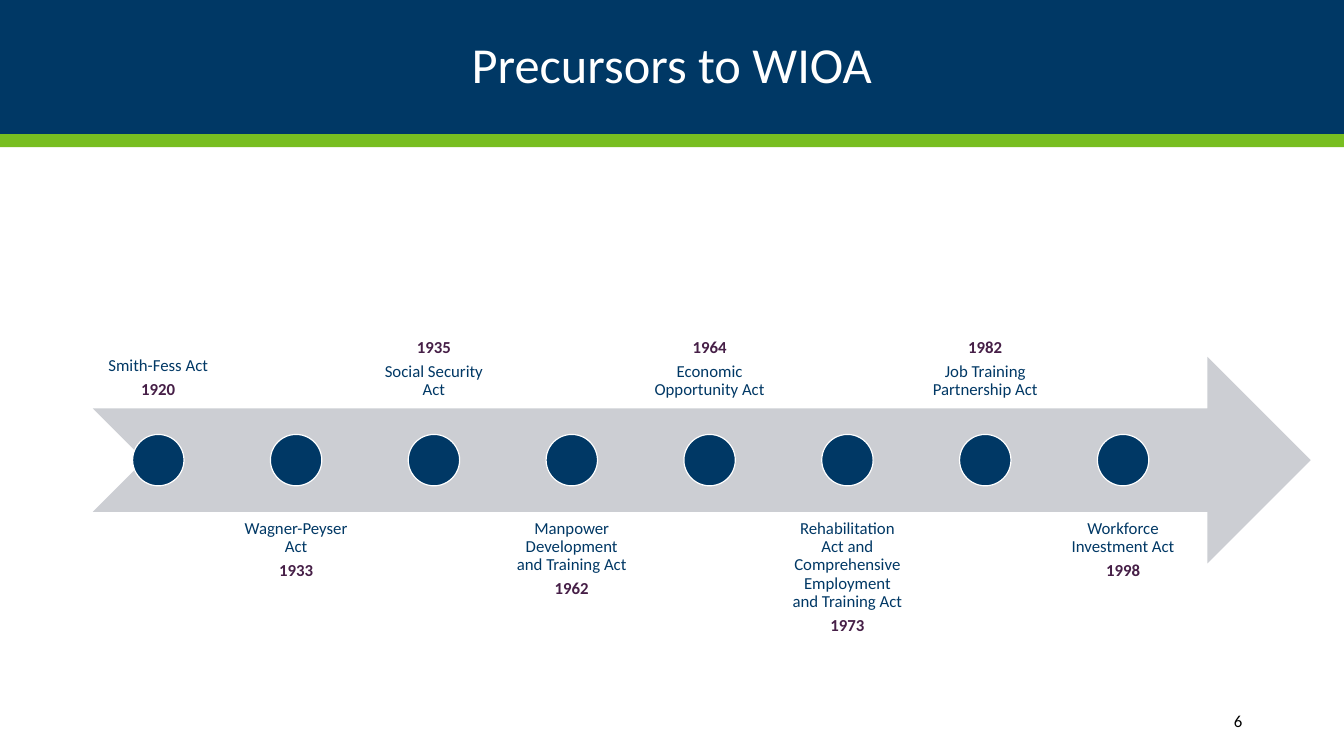
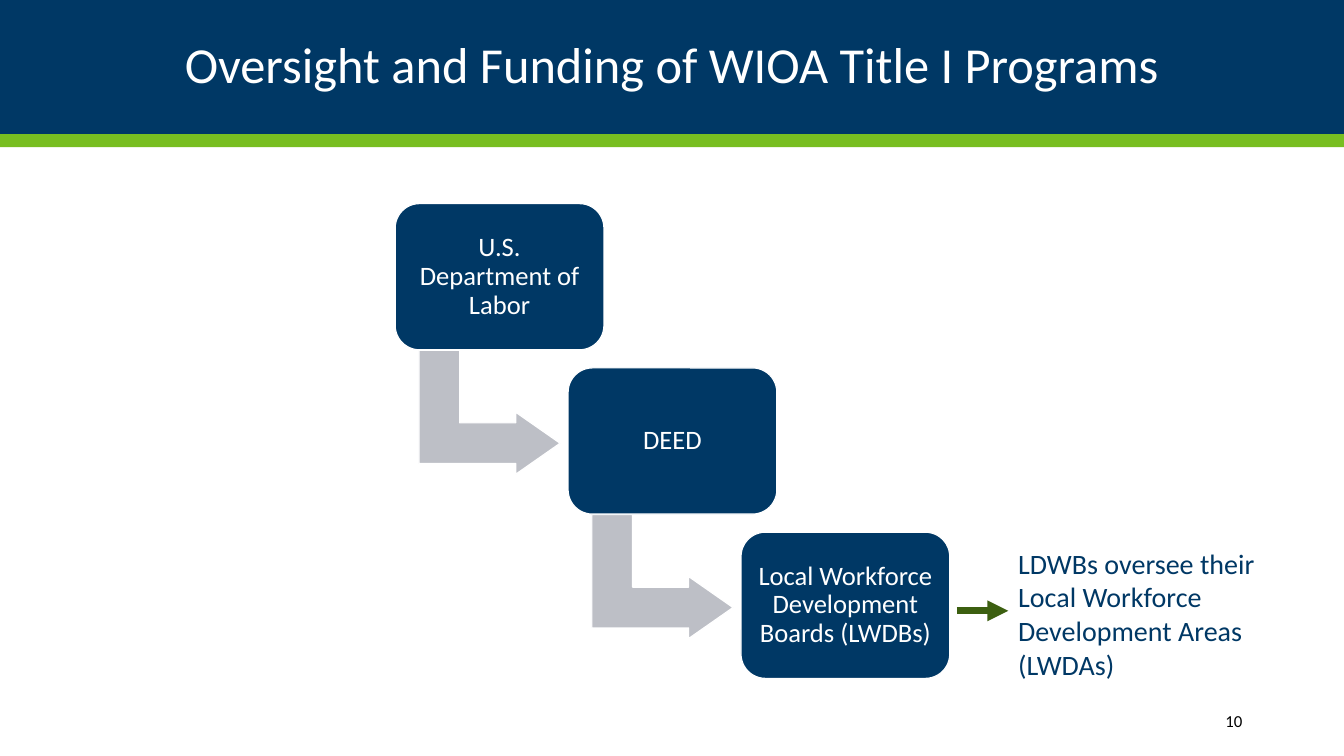
from lxml.etree import SubElement
from pptx import Presentation
from pptx.dml.color import RGBColor
from pptx.enum.shapes import MSO_CONNECTOR, MSO_SHAPE
from pptx.enum.text import MSO_ANCHOR, PP_ALIGN
from pptx.oxml.ns import qn
from pptx.util import Inches, Pt

WIDTH, HEIGHT = 13.33, 7.5
FONT = "Calibri"
COLORS = {
    "navy": "003865", "green": "78BE21", "dark_green": "3C5F10", "plum": "461F47",
    "arrow": "CCCED3", "elbow": "BDBFC6", "white": "FFFFFF", "black": "000000",
}

# Act, year, and whether the year stands above the name
ACTS = [
    ("Smith-Fess Act", "1920", False),
    ("Wagner-Peyser Act", "1933", False),
    ("Social Security Act", "1935", True),
    ("Manpower Development and Training Act", "1962", False),
    ("Economic Opportunity Act", "1964", True),
    ("Rehabilitation Act and Comprehensive Employment and Training Act", "1973", False),
    ("Job Training Partnership Act", "1982", True),
    ("Workforce Investment Act", "1998", False),
]
OVERSIGHT = ["U.S. Department of Labor", "DEED", "Local Workforce Development Boards (LWDBs)"]
BOARD_ROLE = "LDWBs oversee their Local Workforce Development Areas (LWDAs)"


def rgb(color):
    return RGBColor.from_string(COLORS[color])


def add_block(slide, preset, box, fill, outline=None):
    block = slide.shapes.add_shape(preset, *map(Inches, box))
    block.shadow.inherit = False
    block.fill.solid()
    block.fill.fore_color.rgb = rgb(fill)
    if outline:
        block.line.color.rgb = rgb(outline)
        block.line.width = Pt(0.85)
    else:
        block.line.fill.background()
    return block


def write(holder, lines, size, align=PP_ALIGN.CENTER, anchor=MSO_ANCHOR.MIDDLE,
          insets=(0.1, 0.05), spacing=0.9, after=0):
    """Fill a shape with lines, each a (text, color, bold) tuple."""
    frame = holder.text_frame
    frame.word_wrap = True
    frame.vertical_anchor = anchor
    frame.margin_left = frame.margin_right = Inches(insets[0])
    frame.margin_top = frame.margin_bottom = Inches(insets[1])
    for index, (text, color, bold) in enumerate(lines):
        paragraph = frame.add_paragraph() if index else frame.paragraphs[0]
        paragraph.alignment = align
        paragraph.line_spacing = spacing
        paragraph.space_after = Pt(after)
        run = paragraph.add_run()
        run.text = text
        run.font.name = FONT
        run.font.size = Pt(size)
        run.font.bold = bold
        run.font.color.rgb = rgb(color)


def add_text(slide, box, lines, size, **style):
    write(slide.shapes.add_textbox(*map(Inches, box)), lines, size, **style)


def add_arrow(slide, start, end, color, width):
    arrow = slide.shapes.add_connector(MSO_CONNECTOR.STRAIGHT, *map(Inches, start + end))
    arrow.line.color.rgb = rgb(color)
    arrow.line.width = Pt(width)
    SubElement(arrow.line._get_or_add_ln(), qn("a:tailEnd"), type="triangle")
    SubElement(arrow._element.spPr, qn("a:effectLst"))


def add_framed_slide(deck, title, number):
    """Add a slide with the title band, its green rule and the page number."""
    slide = deck.slides.add_slide(deck.slide_layouts[6])
    band_height = 1.33
    add_block(slide, MSO_SHAPE.RECTANGLE, (0, band_height, WIDTH, 0.13), "green")
    band = add_block(slide, MSO_SHAPE.RECTANGLE, (0, 0, WIDTH, band_height), "navy")
    write(band, [(title, "white", False)], 36, insets=(0.9, 0.05))
    add_text(slide, (10.82, 6.95, 1.6, 0.4), [(str(number), "black", False)], 12,
             align=PP_ALIGN.RIGHT, spacing=1)
    return slide


def build_timeline(deck):
    slide = add_framed_slide(deck, "Precursors to WIOA", 6)
    left, top, arrow_height = 0.92, 3.54, 2.05
    label_width, pitch, dot = 1.3, 1.367, 0.51
    middle = top + arrow_height / 2
    add_block(slide, MSO_SHAPE.NOTCHED_RIGHT_ARROW, (left, top, 12.08, arrow_height), "arrow")
    for index, (act, year, year_first) in enumerate(ACTS):
        x = left + index * pitch
        above = index % 2 == 0
        lines = [(act, "navy", False), (year, "plum", True)]
        if year_first:
            lines.reverse()
        add_text(slide, (x, 2 if above else 5.07, label_width, arrow_height), lines, 12,
                 anchor=MSO_ANCHOR.BOTTOM if above else MSO_ANCHOR.TOP,
                 insets=(0.09, 0.09), after=4.2)
        add_block(slide, MSO_SHAPE.OVAL,
                  (x + (label_width - dot) / 2, middle - dot / 2, dot, dot), "navy", "white")


def build_oversight(deck):
    slide = add_framed_slide(deck, "Oversight and Funding of WIOA Title I Programs", 10)
    left, top, step_x, step_y = 3.92, 2.02, 1.715, 1.63
    for index, body in enumerate(OVERSIGHT):
        x, y = left + index * step_x, top + index * step_y
        if index < len(OVERSIGHT) - 1:
            elbow = add_block(slide, MSO_SHAPE.BENT_UP_ARROW,
                              (x + 0.32, y + 1.37, 1.23, 1.4), "elbow", "white")
            elbow.rotation = 90
            for position, share in enumerate((0.328, 0.25, 0.358)):
                elbow.adjustments[position] = share
        step = add_block(slide, MSO_SHAPE.ROUNDED_RECTANGLE, (x, y, 2.07, 1.45), "navy", "white")
        write(step, [(body, "white", False)], 19, insets=(0.08, 0.08))
    add_arrow(slide, (9.49, 6.06), (10, 6.06), "dark_green", 5)
    add_text(slide, (10, 5.37, 2.66, 1.45), [(BOARD_ROLE, "navy", False)], 20,
             align=PP_ALIGN.LEFT, anchor=MSO_ANCHOR.TOP, spacing=1)


def main():
    deck = Presentation()
    deck.slide_width, deck.slide_height = Inches(WIDTH), Inches(HEIGHT)
    build_timeline(deck)
    build_oversight(deck)
    deck.save("out.pptx")


if __name__ == "__main__":
    main()
